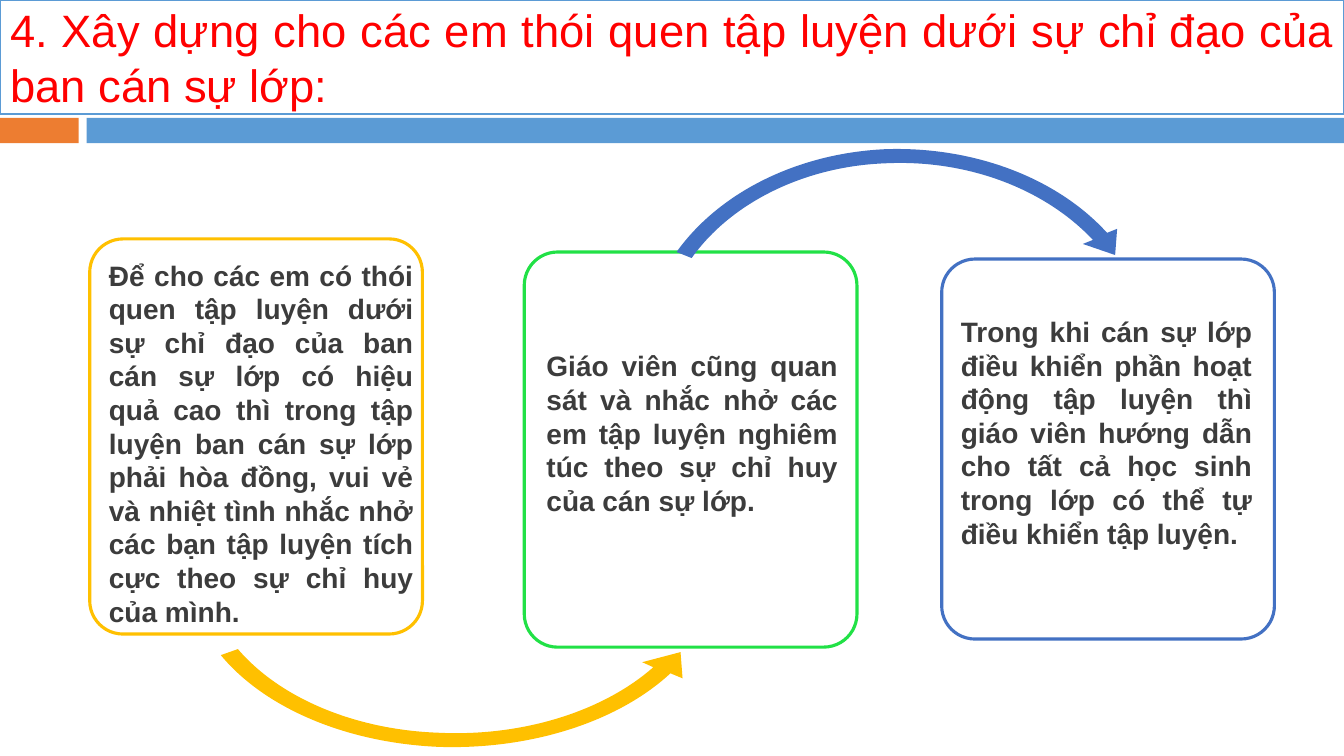
from lxml.etree import SubElement
from pptx import Presentation
from pptx.dml.color import RGBColor
from pptx.enum.shapes import MSO_SHAPE as Shape
from pptx.enum.text import MSO_ANCHOR as Anchor, MSO_AUTO_SIZE as AutoSize, PP_ALIGN as Align
from pptx.oxml.ns import qn
from pptx.util import Inches, Pt

WHITE = RGBColor(0xFF, 0xFF, 0xFF)
RED = RGBColor(0xFF, 0x00, 0x00)
ORANGE = RGBColor(0xED, 0x7D, 0x31)
SKY = RGBColor(0x5B, 0x9B, 0xD5)
AMBER = RGBColor(0xFF, 0xC0, 0x00)
GREEN = RGBColor(0x21, 0xE1, 0x46)
BLUE = RGBColor(0x43, 0x71, 0xC3)
GREY = RGBColor(0x3C, 0x3C, 0x3C)

TITLE = "4. Xây dựng cho các em thói quen tập luyện dưới sự chỉ đạo của ban cán sự lớp:"
CARDS = [
    ((0.89, 2.37, 3.3, 3.92), (0.05, 0.05, 3.3, 2.17), AMBER,
     "Để cho các em có thói quen tập luyện dưới sự chỉ đạo của ban cán sự lớp có hiệu quả "
     "cao thì trong tập luyện ban cán sự lớp phải hòa đồng, vui vẻ và nhiệt tình nhắc nhở "
     "các bạn tập luyện tích cực theo sự chỉ huy của mình."),
    ((5.2, 2.5, 3.3, 3.92), (0.08, 0.82, 3.17, 2.01), GREEN,
     "Giáo viên cũng quan sát và nhắc nhở các em tập luyện nghiêm túc theo sự chỉ huy "
     "của cán sự lớp."),
    ((9.34, 2.57, 3.3, 3.77), (0.05, 0.41, 3.17, 2.01), BLUE,
     "Trong khi cán sự lớp điều khiển phần hoạt động tập luyện thì giáo viên hướng dẫn "
     "cho tất cả học sinh trong lớp có thể tự điều khiển tập luyện."),
]
LOWER_ARROW = [
    (0.48, 2.77), (0.65, 2.71), (0.65, 2.71), (1.06, 3.19, 1.8, 3.51, 2.64, 3.54),
    (3.47, 3.58, 4.27, 3.33, 4.77, 2.89), (4.66, 2.84), (5.04, 2.74), (5.06, 3),
    (4.94, 2.95), (4.94, 2.95), (4.41, 3.44, 3.54, 3.71, 2.64, 3.68),
    (1.73, 3.64, 0.92, 3.3, 0.48, 2.77),
]
UPPER_ARROW = [
    (0.44, 1.11), (0.44, 1.11), (0.87, 0.51, 1.65, 0.13, 2.51, 0.09),
    (3.38, 0.06, 4.21, 0.37, 4.71, 0.92), (4.81, 0.88), (4.79, 1.14), (4.47, 1.03),
    (4.57, 0.99), (4.57, 0.99), (4.09, 0.48, 3.32, 0.19, 2.51, 0.23),
    (1.71, 0.26, 0.98, 0.62, 0.59, 1.17),
]
ARROWS = [((1.71, 3.73, 5.61, 3.77), LOWER_ARROW, AMBER),
          ((6.27, 1.39, 5.31, 4.19), UPPER_ARROW, BLUE)]


def set_all(target, values):
    """Set each named attribute of the target."""
    for name, value in values.items():
        setattr(target, name, value)


def write_text(frame, text, inset, spacing, color, font):
    """Write one justified paragraph into a text frame."""
    side, top = inset
    set_all(frame, {"word_wrap": True, "auto_size": AutoSize.NONE,
                    "margin_left": Inches(side), "margin_right": Inches(side),
                    "margin_top": Inches(top), "margin_bottom": Inches(top)})
    para = frame.paragraphs[0]
    set_all(para, {"alignment": Align.JUSTIFY, "line_spacing": Pt(spacing),
                   "space_before": Pt(0)})
    span = para.add_run()
    span.text = text
    set_all(span.font, {"name": "Arial", **font})
    span.font.color.rgb = color


def paint(shape, fill, line=None, width=1):
    """Give a shape a flat fill and an optional outline."""
    shape.shadow.inherit = False
    shape.fill.solid()
    shape.fill.fore_color.rgb = fill
    if line is None:
        shape.line.fill.background()
    else:
        shape.line.color.rgb = line
        shape.line.width = Pt(width)


def add_heading(page, box):
    """Place the framed title with the two-coloured bar under it."""
    left, top, width, height = box
    title = page.shapes.title
    set_all(title, dict(zip(("left", "top", "width", "height"), map(Inches, box))))
    title.fill.solid()
    title.fill.fore_color.rgb = WHITE
    title.line.color.rgb = SKY
    title.line.width = Pt(1)
    write_text(title.text_frame, TITLE, (0.1, 0.05), 39, RED,
               {"size": Pt(32.4), "bold": False})
    title.text_frame.vertical_anchor = Anchor.MIDDLE
    for start, end, color in ((0, 0.78, ORANGE), (0.86, width, SKY)):
        bar = page.shapes.add_shape(Shape.RECTANGLE, Inches(left + start),
                                    Inches(top + height + 0.04),
                                    Inches(end - start), Inches(0.25))
        paint(bar, color)


def add_card(page, box, text_box, color, text):
    """Place a rounded card and its text, offset from the card corner."""
    card = page.shapes.add_shape(Shape.ROUNDED_RECTANGLE, *map(Inches, box))
    card.adjustments[0] = 0.1
    paint(card, WHITE, color, 2.25)
    tint = card.fill._xPr.find(qn("a:solidFill"))[0]
    SubElement(tint, qn("a:alpha"), val="90000")
    shift_x, shift_y, width, height = text_box
    label = page.shapes.add_textbox(Inches(box[0] + shift_x), Inches(box[1] + shift_y),
                                    Inches(width), Inches(height))
    label.text_frame.vertical_anchor = Anchor.TOP
    write_text(label.text_frame, text, (0.14, 0.14), 24, GREY,
               {"size": Pt(20), "bold": True})


def add_arrow(page, box, outline, color):
    """Draw a curved arrow from lines and cubic curves, relative to its box."""
    left, top, width, height = map(Inches, box)
    builder = page.shapes.build_freeform(left, top)
    builder.add_line_segments([(left + width, top), (left + width, top + height),
                               (left, top + height)], close=True)
    arrow = builder.convert_to_shape()
    paint(arrow, color)
    route = next(arrow.element.iter(qn("a:path")))
    for child in list(route):
        route.remove(child)
    for index, step in enumerate(outline):
        kind = "moveTo" if index == 0 else "lnTo" if len(step) == 2 else "cubicBezTo"
        segment = SubElement(route, qn(f"a:{kind}"))
        for x, y in zip(step[::2], step[1::2]):
            SubElement(segment, qn("a:pt"), x=str(Inches(x)), y=str(Inches(y)))
    SubElement(route, qn("a:close"))


def main():
    """Build the slide and save it."""
    deck = Presentation()
    set_all(deck, {"slide_width": Inches(13.33), "slide_height": Inches(7.5)})
    page = deck.slides.add_slide(deck.slide_layouts[5])
    add_heading(page, (0, 0, 13.33, 1.13))
    for card in CARDS:
        add_card(page, *card)
    for arrow in ARROWS:
        add_arrow(page, *arrow)
    deck.save("out.pptx")


if __name__ == "__main__":
    main()
